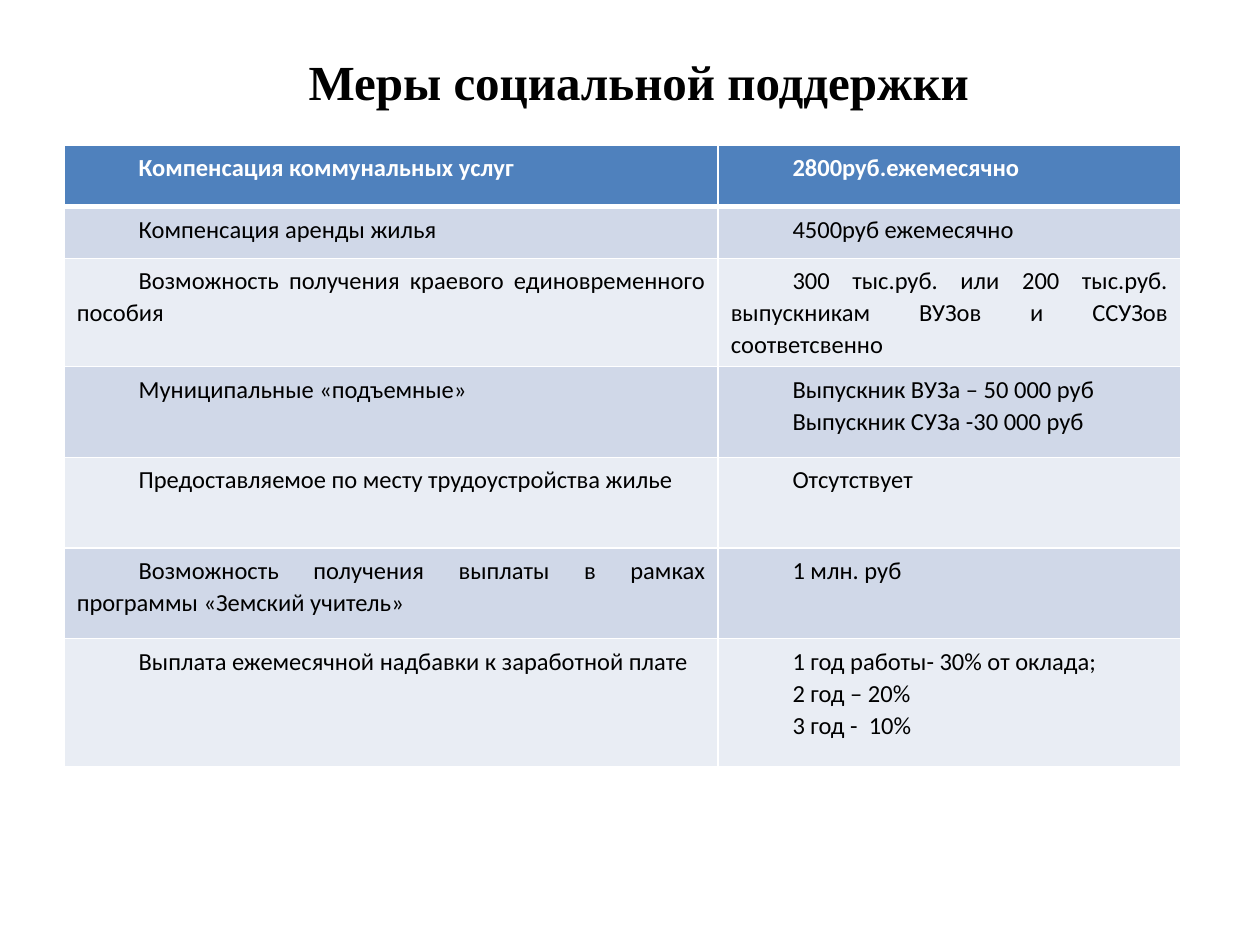
import pptx
import pptx.dml.color
import pptx.enum.text
import pptx.oxml.ns
import pptx.util
from dataclasses import dataclass
from lxml import etree

Inches = pptx.util.Inches
Align = pptx.enum.text.PP_ALIGN


@dataclass(frozen=True)
class Theme:
    head: str = "4F81BD"
    bands: tuple = ("D0D8E8", "E9EDF4")
    white: str = "FFFFFF"
    black: str = "000000"
    title: int = 28
    body: int = 14
    serif: str = "Times New Roman"
    sans: str = "Calibri"


THEME = Theme()
TITLE = "Меры социальной поддержки"
COLS = (5.19, 3.67)
# Row height, measure, and one or more lines of terms
ROWS = (
    (0.49, "Компенсация коммунальных услуг", "2800руб.ежемесячно"),
    (0.41, "Компенсация аренды жилья", "4500руб ежемесячно"),
    (0.72, "Возможность получения краевого единовременного пособия",
     "300 тыс.руб. или 200 тыс.руб. выпускникам ВУЗов и ССУЗов соответсвенно"),
    (0.72, "Муниципальные «подъемные»",
     "Выпускник ВУЗа – 50 000 руб\nВыпускник СУЗа -30 000 руб"),
    (0.72, "Предоставляемое по месту трудоустройства жилье", "Отсутствует"),
    (0.72, "Возможность получения выплаты в рамках программы «Земский учитель»",
     "1 млн. руб"),
    (1.02, "Выплата ежемесячной надбавки к заработной плате",
     "1 год работы- 30% от оклада;\n2 год – 20%\n3 год -  10%"),
)


def rgb(color):
    return pptx.dml.color.RGBColor.from_string(color)


def write(frame, text, size, font, color, bold=False, align=Align.LEFT,
          indent=0, space=1.0):
    """Fill a text frame, one paragraph for each line."""
    frame.text = text
    for par in frame.paragraphs:
        par.alignment = align
        par.line_spacing = space
        if indent:
            props = par._p.get_or_add_pPr()
            props.set("marL", "0")
            props.set("indent", str(Inches(indent)))
        for run in par.runs:
            run.font.size = pptx.util.Pt(size)
            run.font.name = font
            run.font.bold = bold
            run.font.color.rgb = rgb(color)


def edge(cell, base):
    """Draw white cell borders; base is the width of the lower one."""
    props = cell._tc.get_or_add_tcPr()
    qn = pptx.oxml.ns.qn
    widths = {"lnL": 1, "lnR": 1, "lnT": 1, "lnB": base}
    for spot, (tag, width) in enumerate(widths.items()):
        line = etree.Element(qn("a:" + tag), w=str(pptx.util.Pt(width)))
        fill = etree.SubElement(line, qn("a:solidFill"))
        etree.SubElement(fill, qn("a:srgbClr"), val=THEME.white)
        props.insert(spot, line)


def title(slide, left, top, width, height):
    shape = slide.shapes.title
    shape.left, shape.top = Inches(left), Inches(top)
    shape.width, shape.height = Inches(width), Inches(height)
    frame = shape.text_frame
    frame.word_wrap = False
    frame.vertical_anchor = pptx.enum.text.MSO_ANCHOR.TOP
    write(frame, TITLE, THEME.title, THEME.serif, THEME.black,
          bold=True, align=Align.CENTER)


def grid(slide, left, top, width, height):
    table = slide.shapes.add_table(
        len(ROWS), len(COLS), Inches(left), Inches(top),
        Inches(width), Inches(height)).table
    for col, share in zip(table.columns, COLS):
        col.width = Inches(width * share / sum(COLS))
    for r, (tall, *texts) in enumerate(ROWS):
        table.rows[r].height = Inches(tall)
        head = r == 0
        for c, text in enumerate(texts):
            cell = table.cell(r, c)
            cell.fill.solid()
            cell.fill.fore_color.rgb = rgb(
                THEME.head if head else THEME.bands[(r - 1) % 2])
            # The line under the header is heavier, on both of its sides
            edge(cell, 3 if head else 1)
            write(cell.text_frame, text, THEME.body, THEME.sans,
                  THEME.white if head else THEME.black, bold=head,
                  align=Align.JUSTIFY, indent=0.49, space=1.07)


def main():
    deck = pptx.Presentation()
    deck.slide_width, deck.slide_height = Inches(10), Inches(7.5)
    slide = deck.slides.add_slide(deck.slide_layouts[5])
    grid(slide, 0.51, 1.15, sum(COLS), sum(row[0] for row in ROWS))
    title(slide, 2.32, 0.36, 5.5, 0.57)
    deck.save("out.pptx")


if __name__ == "__main__":
    main()
